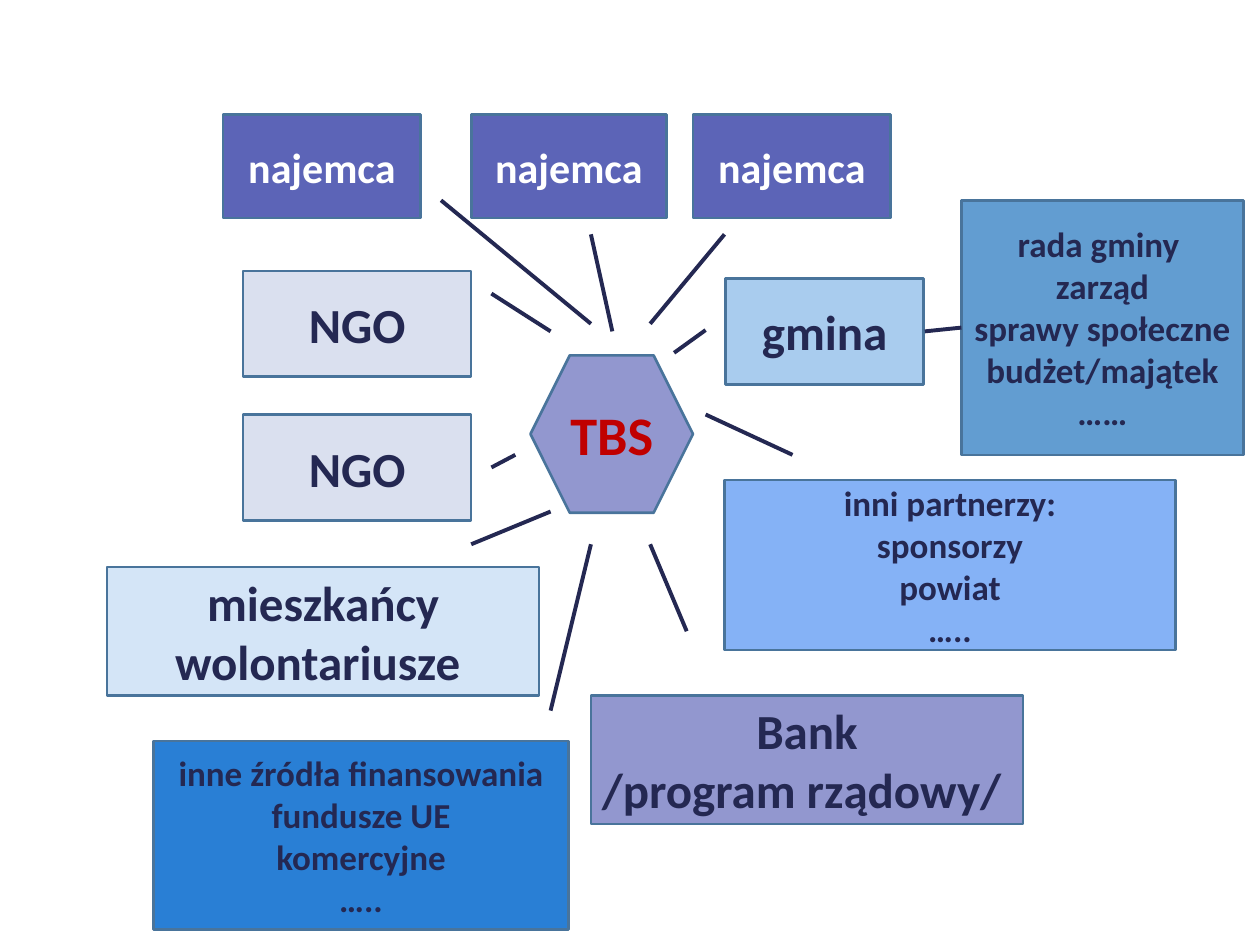
from dataclasses import dataclass

from lxml.etree import SubElement
from pptx import Presentation
from pptx.dml.color import RGBColor
from pptx.enum.shapes import MSO_CONNECTOR as Connector, MSO_SHAPE as Shape
from pptx.enum.text import MSO_ANCHOR as Anchor, PP_ALIGN as Align
from pptx.oxml.ns import qn
from pptx.util import Inches, Pt

COLUMNS, ROWS = 100, 75
CELL = Inches(0.1)


@dataclass(frozen=True)
class Theme:
    font: str = "Calibri"
    dark: str = "242852"
    white: str = "FFFFFF"
    red: str = "C00000"
    outline: str = "49749B"
    tenant: str = "5C64B7"
    ngo: str = "DAE0EF"
    resident: str = "D4E5F7"
    violet: str = "9297CF"
    commune: str = "A9CCEE"
    council: str = "629DD1"
    partner: str = "85B2F6"
    funding: str = "297FD5"
    hub_size: float = 31
    large: float = 28
    medium: float = 24
    small: float = 20
    outline_width: float = 1.5
    spoke_width: float = 2.25


THEME = Theme()


def grid(*cells):
    """Turn grid columns and rows into slide lengths."""
    return [round(cell * CELL) for cell in cells]


def color(code):
    return RGBColor.from_string(code)


def write_text(frame, text, *, size, ink):
    """Fill a frame with centred bold text, one paragraph per line."""
    frame.word_wrap = True
    frame.vertical_anchor = Anchor.MIDDLE
    frame.margin_left = frame.margin_right = Inches(0.07)
    for index, line in enumerate(text.split("\n")):
        para = frame.add_paragraph() if index else frame.paragraphs[0]
        para.alignment = Align.CENTER
        span = para.add_run()
        span.text = line
        span.font.name = THEME.font
        span.font.size = Pt(size)
        span.font.bold = True
        span.font.color.rgb = color(ink)


def add_box(page, text, place, fill, *, size=THEME.large, ink=THEME.dark,
            kind=Shape.RECTANGLE):
    box = page.shapes.add_shape(kind, *grid(*place))
    box.shadow.inherit = False
    box.fill.solid()
    box.fill.fore_color.rgb = color(fill)
    box.line.color.rgb = color(THEME.outline)
    box.line.width = Pt(THEME.outline_width)
    write_text(box.text_frame, text, size=size, ink=ink)


def add_spoke(page, start, end):
    spoke = page.shapes.add_connector(Connector.STRAIGHT, *grid(*start, *end))
    spoke.line.color.rgb = color(THEME.dark)
    spoke.line.width = Pt(THEME.spoke_width)
    SubElement(spoke._element.spPr, qn("a:effectLst"))


def add_tenants(page):
    for left, width in ((17.7, 15.7), (37.4, 15.5), (55, 15.7)):
        add_box(page, "najemca", (left, 9.1, width, 8.2), THEME.tenant,
                size=THEME.medium, ink=THEME.white)


def add_partners(page):
    for top in (21.5, 32.9):
        add_box(page, "NGO", (19.3, top, 18.1, 8.4), THEME.ngo)
    add_box(page, "gmina", (57.6, 22.1, 15.7, 8.4), THEME.commune)
    add_box(page, "mieszkańcy\nwolontariusze ", (8.5, 45, 34.3, 10.2),
            THEME.resident)
    add_box(page, "Bank\n/program rządowy/ ", (46.9, 55.2, 34.3, 10.2),
            THEME.violet)


def add_detail_lists(page):
    lists = (
        ("rada gminy \nzarząd\nsprawy społeczne\nbudżet/majątek\n……",
         (76.3, 15.9, 22.4, 20.2), THEME.council),
        ("inni partnerzy:\nsponsorzy\npowiat\n…..",
         (57.5, 38.1, 35.8, 13.5), THEME.partner),
        ("inne źródła finansowania\nfundusze UE\nkomercyjne\n…..",
         (12.2, 58.8, 32.9, 15), THEME.funding),
    )
    for text, place, fill in lists:
        add_box(page, text, place, fill, size=THEME.small)


def add_spokes(page):
    spokes = (
        ((35, 15.9), (46.9, 25.7)),
        ((46.9, 18.6), (48.6, 26.3)),
        ((57.5, 18.6), (51.6, 25.7)),
        ((39, 23.3), (43.7, 26.3)),
        ((39, 37.1), (40.9, 36.1)),
        ((37.4, 43.2), (43.7, 40.6)),
        ((56, 26.2), (53.5, 28)),
        ((73.4, 26.3), (76.3, 26)),
        ((56, 32.9), (62.9, 36.1)),
        ((51.6, 43.2), (54.5, 50.1)),
        ((46.9, 43.2), (43.7, 56.4)),
    )
    for start, end in spokes:
        add_spoke(page, start, end)


def main():
    deck = Presentation()
    deck.slide_width, deck.slide_height = grid(COLUMNS, ROWS)
    page = deck.slides.add_slide(deck.slide_layouts[6])
    add_box(page, "TBS", (42.1, 28.2, 12.9, 12.5), THEME.violet,
            size=THEME.hub_size, ink=THEME.red, kind=Shape.HEXAGON)
    add_tenants(page)
    add_partners(page)
    add_detail_lists(page)
    add_spokes(page)
    deck.save("out.pptx")


if __name__ == "__main__":
    main()
